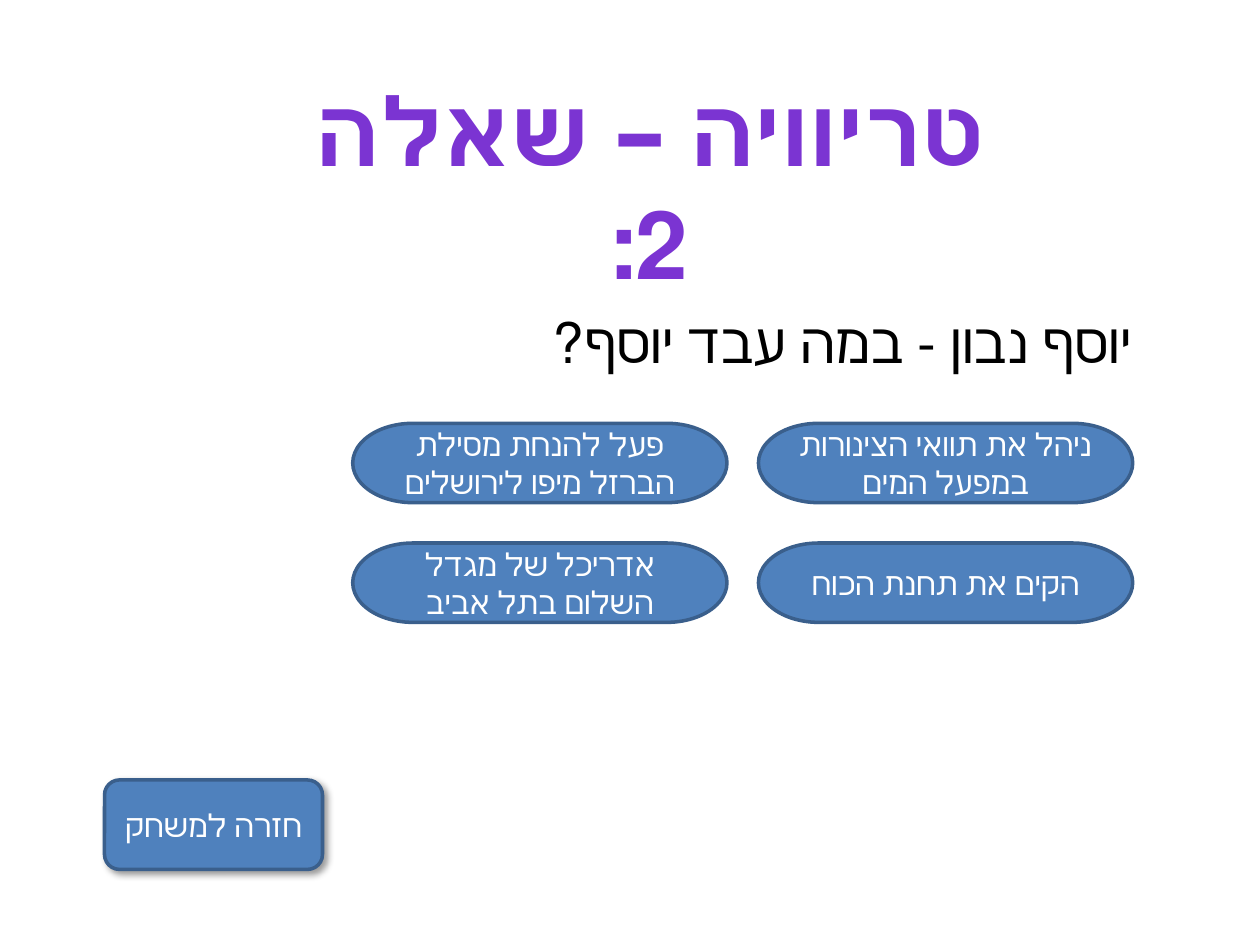
from lxml import etree
from pptx import Presentation
from pptx.dml.color import RGBColor
from pptx.enum.shapes import MSO_SHAPE as Shape
from pptx.enum.text import MSO_ANCHOR as Anchor, MSO_AUTO_SIZE as AutoSize, PP_ALIGN as Align
from pptx.oxml.ns import nsdecls
from pptx.util import Inches, Pt

COLORS = {
    "title": "7B34D2",
    "question": "000000",
    "button": "4F81BD",
    "border": "3A5F8C",
    "label": "FFFFFF",
}
TITLE = "טריוויה – שאלה 2:"
QUESTION = "יוסף נבון - במה עבד יוסף?"
# Rows of answers, each read from right to left
ANSWERS = [
    ["ניהל את תוואי הצינורות במפעל המים", "פעל להנחת מסילת הברזל מיפו לירושלים"],
    ["הקים את תחנת הכוח", "אדריכל של מגדל השלום בתל אביב"],
]
BACK_LABEL = "חזרה למשחק"

ANSWER_RIGHT, ANSWER_TOP = 6.02, 3.36
ANSWER_WIDTH, ANSWER_HEIGHT = 2.97, 0.63
COLUMN_STEP, ROW_STEP = 3.22, 0.95

SHADOW = f"""<a:effectLst {nsdecls('a')}>
<a:outerShdw blurRad="{Pt(4)}" dist="{Pt(3)}" dir="2700000" algn="tl" rotWithShape="0">
<a:srgbClr val="000000"><a:alpha val="40000"/></a:srgbClr></a:outerShdw></a:effectLst>"""


def color(name):
    return RGBColor.from_string(COLORS[name])


def write(shape, text, size=18, ink="label", bold=False, align=Align.CENTER, wrap=True):
    frame = shape.text_frame
    frame.word_wrap = wrap
    paragraph = frame.paragraphs[0]
    paragraph.alignment = align
    paragraph._p.get_or_add_pPr().set("rtl", "1")
    run = paragraph.add_run()
    run.text = text
    run.font.name = "Calibri"
    run.font.size = Pt(size)
    run.font.bold = bold
    run.font.color.rgb = color(ink)


def add_text(slide, box, text, **text_format):
    shape = slide.shapes.add_textbox(*map(Inches, box))
    write(shape, text, **text_format)
    shape.text_frame.auto_size = AutoSize.SHAPE_TO_FIT_TEXT


def add_button(slide, kind, box, text):
    shape = slide.shapes.add_shape(kind, *map(Inches, box))
    shape.shadow.inherit = False
    shape.fill.solid()
    shape.fill.fore_color.rgb = color("button")
    shape.line.color.rgb = color("border")
    shape.line.width = Pt(2)
    shape.text_frame.vertical_anchor = Anchor.MIDDLE
    write(shape, text)
    return shape


def main():
    presentation = Presentation()
    presentation.slide_width, presentation.slide_height = Inches(10), Inches(7.5)
    slide = presentation.slides.add_slide(presentation.slide_layouts[6])

    # Title and question
    add_text(slide, (2.09, 0.52, 6.14, 1.01), TITLE, size=54, ink="title", bold=True)
    add_text(slide, (4.29, 2.39, 4.88, 0.64), QUESTION, size=32, ink="question",
             align=Align.LEFT, wrap=False)

    # Back button, the only one with a shadow
    back = add_button(slide, Shape.ROUNDED_RECTANGLE, (0.83, 6.19, 1.73, 0.71), BACK_LABEL)
    properties = back._element.spPr
    properties.replace(properties.effectLst, etree.fromstring(SHADOW))

    # Answer grid
    for row, answers in enumerate(ANSWERS):
        for column, answer in enumerate(answers):
            box = (ANSWER_RIGHT - column * COLUMN_STEP, ANSWER_TOP + row * ROW_STEP,
                   ANSWER_WIDTH, ANSWER_HEIGHT)
            add_button(slide, Shape.FLOWCHART_TERMINATOR, box, answer)

    presentation.save("out.pptx")


if __name__ == "__main__":
    main()
